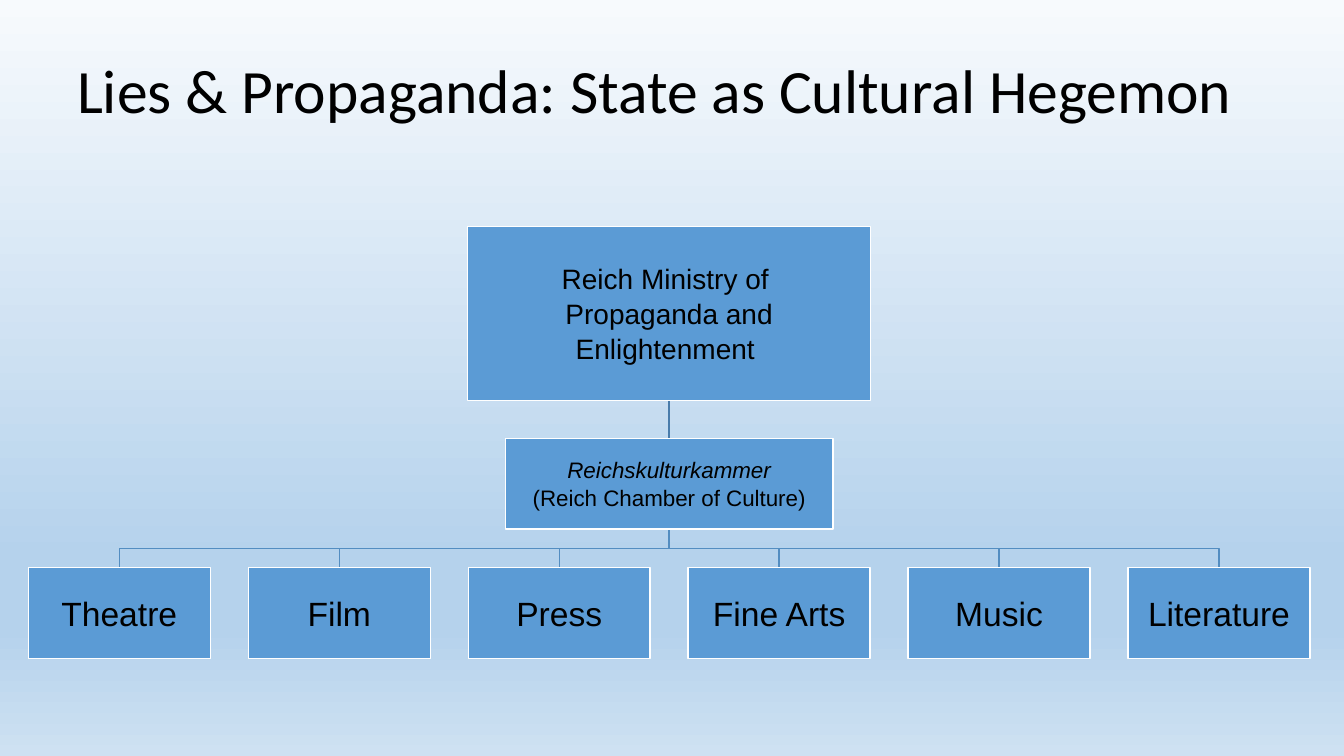
from copy import deepcopy
from dataclasses import dataclass

from pptx import Presentation
from pptx.dml.color import RGBColor
from pptx.enum.shapes import MSO_SHAPE as Preset
from pptx.enum.text import MSO_ANCHOR as Anchor, PP_ALIGN as Align
from pptx.oxml.ns import qn
from pptx.slide import Slide
from pptx.text.text import TextFrame
from pptx.util import Pt

COLORS = {
    "text": "000000",
    "box": "5B9BD5",
    "outline": "FFFFFF",
    "branch": "538DC1",
    "trunk": "497CAB",
    "sky_top": "F7FAFD",
    "sky_middle": "B5D2EC",
    "sky_bottom": "CEE1F2",
}
SKY_STOPS = [(0, "sky_top"), (0.74, "sky_middle"), (0.83, "sky_middle"), (1, "sky_bottom")]
CENTER = 478
PITCH = 157.1
CHAMBERS = ["Theatre", "Film", "Press", "Fine Arts", "Music", "Literature"]


@dataclass(frozen=True)
class Box:
    lines: tuple[str, ...]
    center: float
    top: float
    width: float
    height: float
    size: float
    margin: float
    italic_lines: int = 0

    @property
    def bottom(self) -> float:
        return self.top + self.height


def color(name: str) -> RGBColor:
    return RGBColor.from_string(COLORS[name])


def paint_background(slide: Slide) -> None:
    fill = slide.background.fill
    fill.gradient()
    fill.gradient_angle = 270
    stop_list = slide.element.find(".//" + qn("a:gsLst"))
    while len(stop_list) < len(SKY_STOPS):
        stop_list.append(deepcopy(stop_list[0]))
    for stop, (position, name) in zip(fill.gradient_stops, SKY_STOPS):
        stop.position = position
        stop.color.rgb = color(name)


def write_lines(frame: TextFrame, lines: tuple[str, ...], font_name: str, size: float,
                align: Align, italic_lines: int = 0) -> None:
    frame.word_wrap = True
    frame.vertical_anchor = Anchor.MIDDLE
    for index, line in enumerate(lines):
        paragraph = frame.add_paragraph() if index else frame.paragraphs[0]
        paragraph.text = line
        paragraph.alignment = align
        if index:
            paragraph.space_before = Pt(1)
        font = paragraph.font
        font.name = font_name
        font.size = Pt(size)
        font.italic = index < italic_lines
        font.color.rgb = color("text")


def draw_title(slide: Slide, title: str) -> None:
    shape = slide.shapes.add_textbox(Pt(48), Pt(21.6), Pt(864), Pt(90))
    write_lines(shape.text_frame, (title,), "Calibri", 44, Align.LEFT)
    shape.text_frame.paragraphs[0].line_spacing = 0.9


def draw_box(slide: Slide, box: Box) -> None:
    shape = slide.shapes.add_shape(Preset.RECTANGLE, Pt(box.center - box.width / 2),
                                   Pt(box.top), Pt(box.width), Pt(box.height))
    shape.shadow.inherit = False
    shape.fill.solid()
    shape.fill.fore_color.rgb = color("box")
    shape.line.color.rgb = color("outline")
    shape.line.width = Pt(1)
    frame = shape.text_frame
    frame.margin_left = frame.margin_right = Pt(box.margin)
    frame.margin_top = frame.margin_bottom = Pt(box.margin)
    write_lines(frame, box.lines, "Arial", box.size, Align.CENTER, box.italic_lines)


def draw_link(slide: Slide, parent: Box, child: Box, color_name: str) -> None:
    middle = (parent.bottom + child.top) / 2
    points = [(child.center, child.top)]
    if child.center != parent.center:
        points = [(parent.center, middle), (child.center, middle)] + points
    builder = slide.shapes.build_freeform(Pt(parent.center), Pt(parent.bottom))
    builder.add_line_segments([(Pt(x), Pt(y)) for x, y in points], close=False)
    link = builder.convert_to_shape()
    link.shadow.inherit = False
    link.fill.background()
    link.line.color.rgb = color(color_name)
    link.line.width = Pt(1)


def main() -> None:
    presentation = Presentation()
    presentation.slide_width = Pt(960)
    presentation.slide_height = Pt(540)
    slide = presentation.slides.add_slide(presentation.slide_layouts[6])
    paint_background(slide)
    draw_title(slide, "Lies & Propaganda: State as Cultural Hegemon")

    ministry = Box(("Reich Ministry of ", "Propaganda and", "Enlightenment "),
                   CENTER, 162, 288, 124, 20, 1)
    culture = Box(("Reichskulturkammer", "(Reich Chamber of Culture)"),
                  CENTER, 313.2, 234, 64.8, 16, 1, italic_lines=1)
    middle_index = (len(CHAMBERS) - 1) / 2
    chambers = [
        Box((name,), CENTER + (index - middle_index) * PITCH, 405.4, 130, 64.8, 24, 1.2)
        for index, name in enumerate(CHAMBERS)
    ]

    for chamber in chambers:
        draw_link(slide, culture, chamber, "branch")
    draw_link(slide, ministry, culture, "trunk")
    for box in [ministry, culture, *chambers]:
        draw_box(slide, box)

    presentation.save("out.pptx")


if __name__ == "__main__":
    main()
